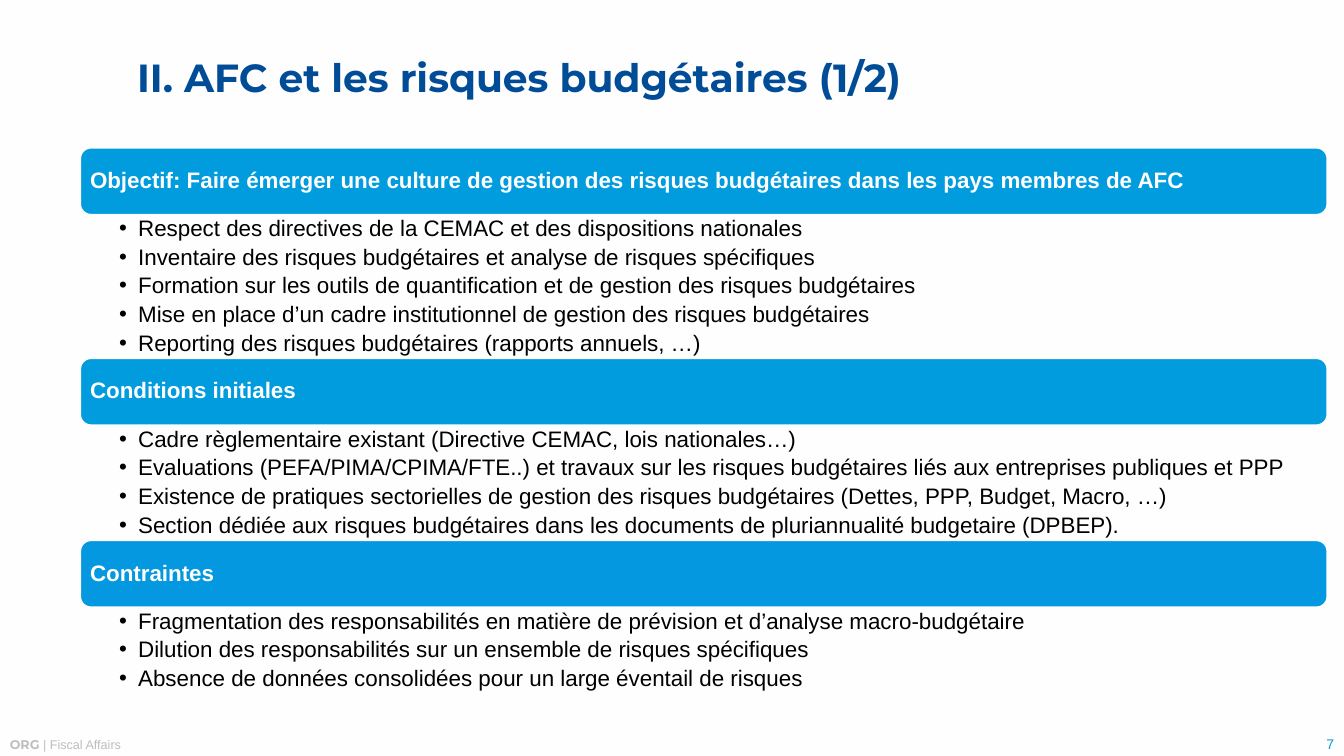
from lxml import etree
from pptx import Presentation
from pptx.dml.color import RGBColor
from pptx.enum.shapes import MSO_SHAPE
from pptx.enum.text import MSO_ANCHOR, MSO_AUTO_SIZE, PP_ALIGN
from pptx.oxml.ns import qn
from pptx.util import Inches, Pt

ROUNDED = MSO_SHAPE.ROUNDED_RECTANGLE
TOP, MIDDLE, BOTTOM = MSO_ANCHOR.TOP, MSO_ANCHOR.MIDDLE, MSO_ANCHOR.BOTTOM
LEFT, RIGHT = PP_ALIGN.LEFT, PP_ALIGN.RIGHT
FIXED = MSO_AUTO_SIZE.NONE

COLORS = {
    "paper": "FEFEFE",
    "navy": "004C97",
    "sky": "009CDE",
    "azure": "0498E0",
    "ink": "000000",
    "gray": "BEBEBE",
}

SECTIONS = [
    ("Objectif: Faire émerger une culture de gestion des risques budgétaires dans les pays membres de AFC", "sky", [
        "Respect des directives de la CEMAC et des dispositions nationales",
        "Inventaire des risques budgétaires et analyse de risques spécifiques",
        "Formation sur les outils de quantification et de gestion des risques budgétaires",
        "Mise en place d’un cadre institutionnel de gestion des risques budgétaires",
        "Reporting des risques budgétaires (rapports annuels, …)",
    ]),
    ("Conditions initiales", "sky", [
        "Cadre règlementaire existant (Directive CEMAC, lois nationales…)",
        "Evaluations (PEFA/PIMA/CPIMA/FTE..) et travaux sur les risques budgétaires liés aux entreprises publiques et PPP",
        "Existence de pratiques sectorielles de gestion des risques budgétaires (Dettes, PPP, Budget, Macro, …)",
        "Section dédiée aux risques budgétaires dans les documents de pluriannualité budgetaire (DPBEP).",
    ]),
    ("Contraintes", "azure", [
        "Fragmentation des responsabilités en matière de prévision et d’analyse macro-budgétaire",
        "Dilution des responsabilités sur un ensemble de risques spécifiques",
        "Absence de données consolidées pour un large éventail de risques",
    ]),
]

deck = Presentation()
deck.slide_width, deck.slide_height = Inches(13.33), Inches(7.5)
COL, ROW = deck.slide_width / 100, deck.slide_height / 100
slide = deck.slides.add_slide(deck.slide_layouts[5])
slide.background.fill.solid()
slide.background.fill.fore_color.rgb = RGBColor.from_string(COLORS["paper"])


def box(left, top, width, height):
    return int(left * COL), int(top * ROW), int(width * COL), int(height * ROW)


def write(frame, text, size=16, font="Arial", color="ink", bold=False, align=LEFT,
          spacing=0.9, after=0, anchor=TOP, insets=(0.1, 0.05, 0.1, 0.05),
          bullet=False, same_line=False):
    frame.word_wrap = True
    frame.auto_size = FIXED
    frame.vertical_anchor = anchor
    (frame.margin_left, frame.margin_top,
     frame.margin_right, frame.margin_bottom) = map(Inches, insets)
    paragraph = frame.paragraphs[-1]
    if paragraph.runs and not same_line:
        paragraph = frame.add_paragraph()
    paragraph.alignment = align
    paragraph.line_spacing = spacing
    paragraph.space_before = Pt(0)
    paragraph.space_after = Pt(after)
    if bullet:
        properties = paragraph._p.get_or_add_pPr()
        properties.set("marL", str(Inches(0.19)))
        properties.set("indent", str(-Inches(0.19)))
        etree.SubElement(properties, qn("a:buFont")).set("typeface", "Arial")
        etree.SubElement(properties, qn("a:buChar")).set("char", "•")
    run = paragraph.add_run()
    run.text = text
    run.font.size = Pt(size)
    run.font.name = font
    run.font.bold = bold
    run.font.color.rgb = RGBColor.from_string(COLORS[color])


title = slide.shapes.title
title.left, title.top, title.width, title.height = box(10.2, 3.47, 79.67, 14.27)
write(title.text_frame, "II. AFC et les risques budgétaires (1/2)", size=28,
      font="Montserrat", color="navy", bold=True, anchor=MIDDLE, insets=(0, 0, 0, 0))

PANEL_LEFT, PANEL_WIDTH = 5.93, 92.87
HEADING_ROWS, POINT_ROWS = 9, 3.77
top = 19.47
for heading, fill, points in SECTIONS:
    banner = slide.shapes.add_shape(ROUNDED, *box(PANEL_LEFT, top, PANEL_WIDTH, HEADING_ROWS))
    banner.shadow.inherit = False
    banner.fill.solid()
    banner.fill.fore_color.rgb = RGBColor.from_string(COLORS[fill])
    banner.line.color.rgb = RGBColor.from_string(COLORS["paper"])
    banner.line.width = Pt(2)
    write(banner.text_frame, heading, color="paper", bold=True, anchor=MIDDLE,
          insets=(0.07, 0.07, 0.07, 0.07))
    top += HEADING_ROWS

    height = POINT_ROWS * len(points)
    details = slide.shapes.add_textbox(*box(PANEL_LEFT, top, PANEL_WIDTH, height))
    for point in points:
        write(details.text_frame, point, after=3.2, bullet=True, insets=(0.39, 0.02, 0.12, 0.02))
    top += height

footer = slide.shapes.add_textbox(*box(0, 96.8, 75, 3.33))
write(footer.text_frame, "ORG ", size=9, font="Montserrat", color="gray", bold=True, spacing=1)
write(footer.text_frame, "| Fiscal Affairs", size=9, color="gray", spacing=1, same_line=True)

page_number = slide.shapes.add_textbox(*box(90.1, 96.53, 9.9, 3.6))
write(page_number.text_frame, "7", size=10, color="sky", align=RIGHT, spacing=1, anchor=BOTTOM)

deck.save("out.pptx")
